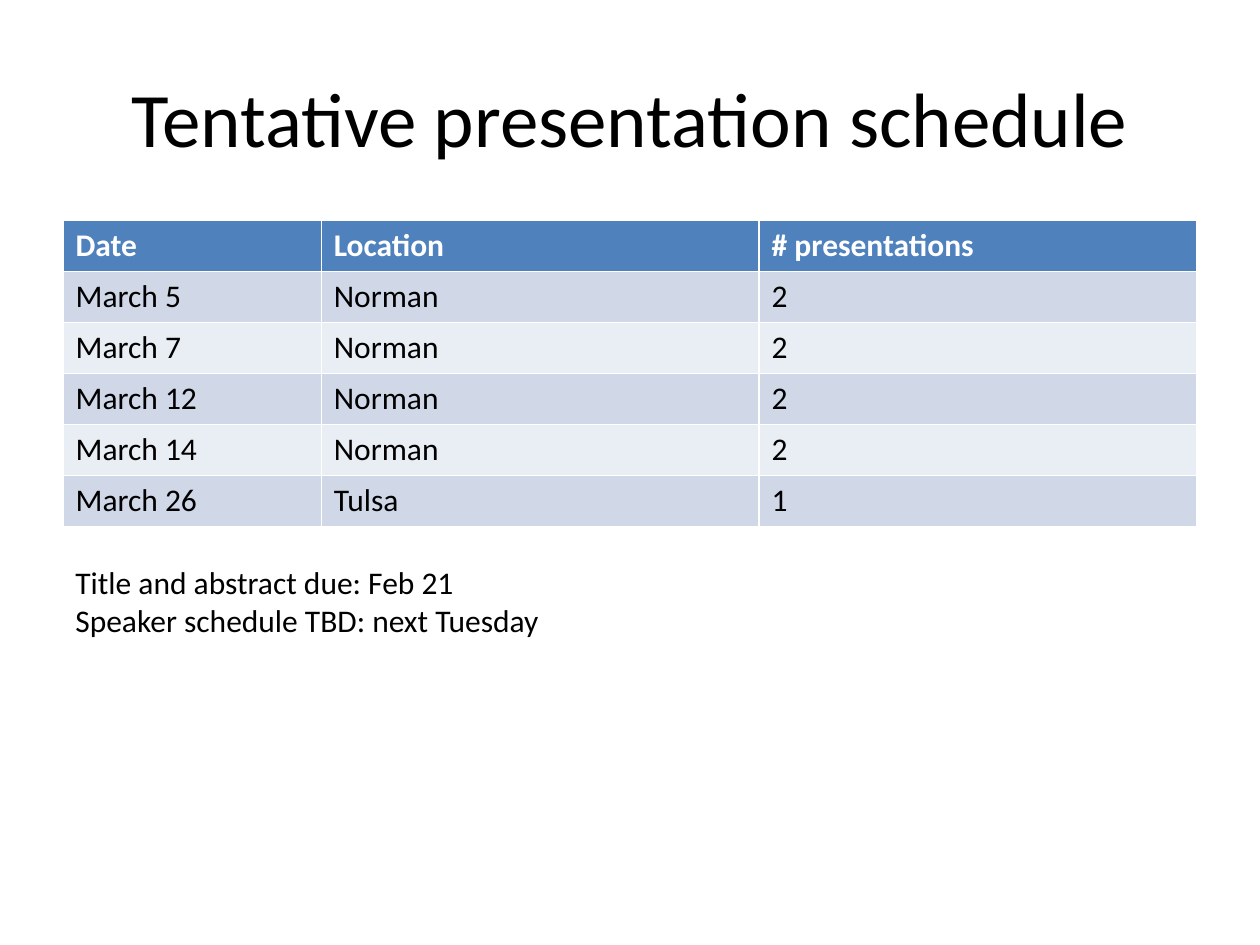
from pptx import Presentation
from pptx.dml.color import RGBColor
from pptx.enum.text import MSO_ANCHOR, PP_ALIGN
from pptx.util import Inches, Pt

BLACK = RGBColor(0x00, 0x00, 0x00)
WHITE = RGBColor(0xFF, 0xFF, 0xFF)
HEADER_BLUE = RGBColor(0x4F, 0x81, 0xBD)
BANDS = (RGBColor(0xD0, 0xD8, 0xE8), RGBColor(0xE9, 0xED, 0xF4))

SLIDE_WIDTH, SLIDE_HEIGHT = Inches(10), Inches(7.5)
MARGIN = Inches(0.5)
CONTENT_WIDTH = SLIDE_WIDTH - 2 * MARGIN

TITLE_FONT = {"name": "Calibri", "size": Pt(44), "bold": False}
BODY_FONT = {"name": "Calibri", "size": Pt(18), "bold": False}
HEADER_FONT = {**BODY_FONT, "bold": True}

COLUMN_SHARES = (2.05, 3.475, 3.475)
SCHEDULE = [
    ("Date", "Location", "# presentations"),
    ("March 5", "Norman", "2"),
    ("March 7", "Norman", "2"),
    ("March 12", "Norman", "2"),
    ("March 14", "Norman", "2"),
    ("March 26", "Tulsa", "1"),
]
DEADLINES = ["Title and abstract due: Feb 21", "Speaker schedule TBD: next Tuesday"]


def write(paragraph, text, font, color):
    run = paragraph.add_run()
    run.text = text
    for attribute, value in font.items():
        setattr(run.font, attribute, value)
    run.font.color.rgb = color


def add_lines(slide, box, lines, font, align=PP_ALIGN.LEFT, anchor=MSO_ANCHOR.TOP):
    """Place one paragraph per line in a wrapped text box."""
    frame = slide.shapes.add_textbox(*box).text_frame
    frame.word_wrap = True
    frame.vertical_anchor = anchor
    for index, line in enumerate(lines):
        paragraph = frame.add_paragraph() if index else frame.paragraphs[0]
        paragraph.alignment = align
        write(paragraph, line, font, BLACK)


def add_schedule(slide, box, rows):
    """Header row over banded rows; the table style draws the white rules."""
    table = slide.shapes.add_table(len(rows), len(COLUMN_SHARES), *box).table
    width, height = box[2:]
    for column, share in zip(table.columns, COLUMN_SHARES):
        column.width = int(width * share / sum(COLUMN_SHARES))
    for row in table.rows:
        row.height = height // len(rows)

    for r, values in enumerate(rows):
        is_header = r == 0
        fill = HEADER_BLUE if is_header else BANDS[(r - 1) % 2]
        font, color = (HEADER_FONT, WHITE) if is_header else (BODY_FONT, BLACK)
        for c, value in enumerate(values):
            cell = table.cell(r, c)
            cell.fill.solid()
            cell.fill.fore_color.rgb = fill
            write(cell.text_frame.paragraphs[0], value, font, color)


def main():
    prs = Presentation()
    prs.slide_width, prs.slide_height = SLIDE_WIDTH, SLIDE_HEIGHT
    slide = prs.slides.add_slide(prs.slide_layouts[6])

    # Title
    title_box = (MARGIN, Inches(0.3), CONTENT_WIDTH, Inches(1.25))
    add_lines(slide, title_box, ["Tentative presentation schedule"], TITLE_FONT,
              PP_ALIGN.CENTER, MSO_ANCHOR.MIDDLE)

    # Schedule table
    add_schedule(slide, (MARGIN, Inches(1.75), CONTENT_WIDTH, Inches(2.43)), SCHEDULE)

    # Deadlines below the table
    deadlines_box = (MARGIN, Inches(4.42), Inches(5.67), Inches(0.71))
    add_lines(slide, deadlines_box, DEADLINES, BODY_FONT)

    prs.save("out.pptx")


if __name__ == "__main__":
    main()
